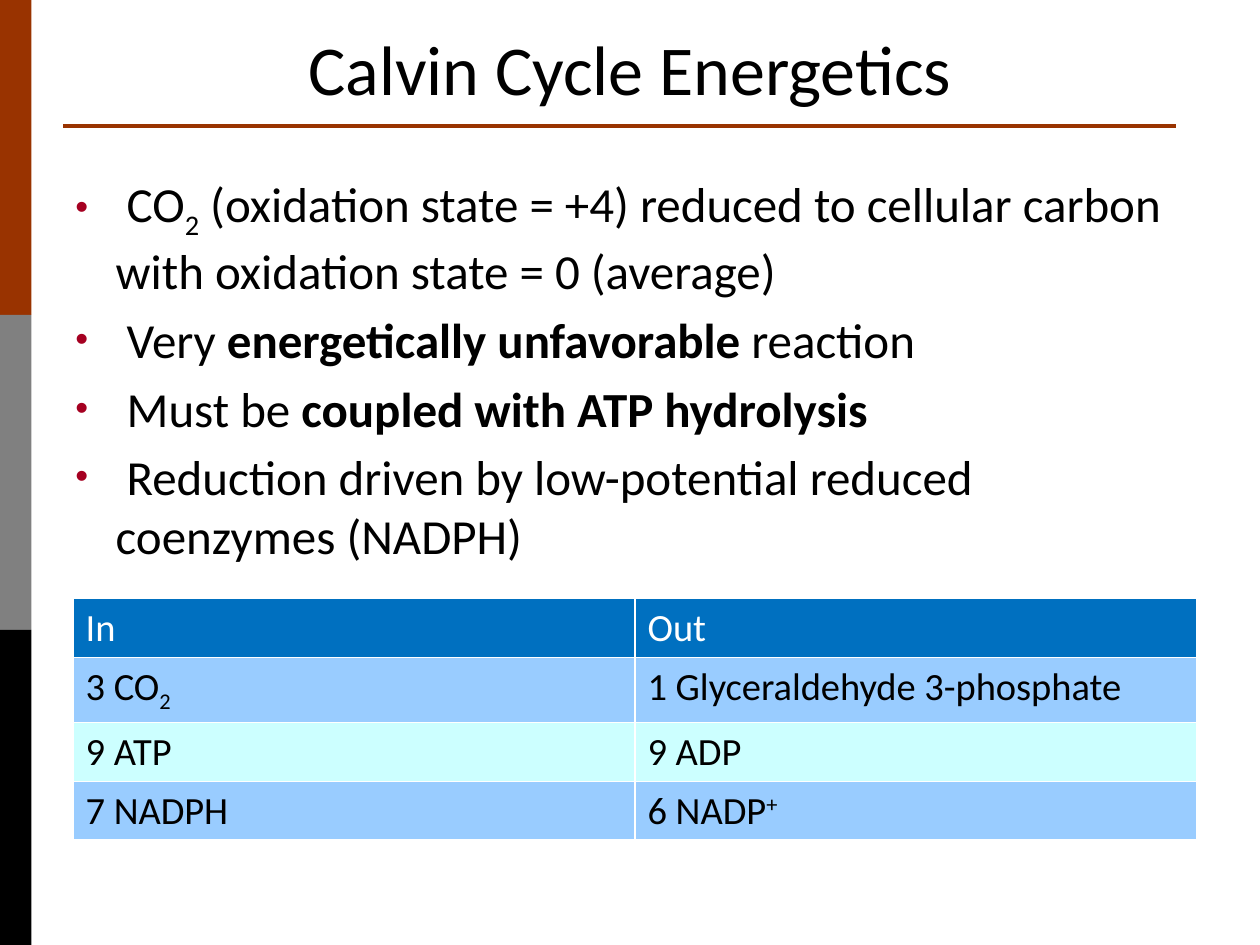
"""Build the Calvin cycle energetics slide."""
from dataclasses import dataclass

from lxml.etree import SubElement
from pptx import Presentation
from pptx.dml.color import RGBColor
from pptx.enum.shapes import MSO_CONNECTOR, MSO_SHAPE
from pptx.enum.text import MSO_ANCHOR, PP_ALIGN
from pptx.oxml.ns import qn
from pptx.util import Emu, Pt

SCALE = 9144


@dataclass(frozen=True)
class Theme:
    """Colours and type sizes."""
    font: str = "Calibri"
    ink: str = "000000"
    white: str = "FFFFFF"
    rust: str = "993300"
    gray: str = "808080"
    dot: str = "A50021"
    head: str = "0070C0"
    bands: tuple = ("99CCFF", "CCFFFF")
    title: int = 40
    body: int = 28
    cell: int = 22


def px(*sizes):
    """Turn px lengths into EMU."""
    return [Emu(size * SCALE) for size in sizes]


def rgb(code):
    """Turn a hex code into a colour."""
    return RGBColor.from_string(code)


def node(parent, tag, **attrs):
    """Add a drawing element with attributes."""
    return SubElement(parent, qn(tag), {key: str(val) for key, val in attrs.items()})


def write(para, text, font, size, color, bold=False, base=0):
    """Add one run of text in the given format."""
    run = para.add_run()
    run.text = text
    face = run.font
    face.name, face.size, face.bold = font, Pt(size), bold
    face.color.rgb = rgb(color)
    if base:
        run._r.get_or_add_rPr().set("baseline", str(base * 1000))


class Deck:
    """Hold the style and the current slide."""

    def __init__(self, theme):
        """Start a deck with one title-only slide."""
        self.theme = theme
        self.file = Presentation()
        self.file.slide_width, self.file.slide_height = px(1000, 750)
        self.slide = self.file.slides.add_slide(self.file.slide_layouts[5])
        self.shapes = self.slide.shapes

    def fill_text(self, para, parts, size, color):
        """Write plain or formatted parts into a paragraph."""
        for part in parts:
            text, form = (part, {}) if isinstance(part, str) else part
            write(para, text, self.theme.font, size, color, **form)

    def bar(self, box, color):
        """Add a plain filled bar."""
        bar = self.shapes.add_shape(MSO_SHAPE.RECTANGLE, *px(*box))
        bar.shadow.inherit = False
        bar.fill.solid()
        bar.fill.fore_color.rgb = rgb(color)
        bar.line.fill.background()

    def rule(self, ends, color, width):
        """Add a straight line."""
        line = self.shapes.add_connector(MSO_CONNECTOR.STRAIGHT, *px(*ends))
        line.line.color.rgb = rgb(color)
        line.line.width = Pt(width)
        node(line._element.spPr, "a:effectLst")

    def title(self, box, text):
        """Place and fill the title."""
        title = self.shapes.title
        title.left, title.top, title.width, title.height = px(*box)
        frame = title.text_frame
        frame.word_wrap = True
        frame.vertical_anchor = MSO_ANCHOR.BOTTOM
        para = frame.paragraphs[0]
        para.alignment = PP_ALIGN.CENTER
        self.fill_text(para, [text], self.theme.title, self.theme.ink)

    def bullets(self, box, items, indent, gap):
        """Add a bulleted list."""
        frame = self.shapes.add_textbox(*px(*box)).text_frame
        frame.word_wrap = True
        hang = px(indent)[0]
        for row, parts in enumerate(items):
            para = frame.add_paragraph() if row else frame.paragraphs[0]
            props = para._p.get_or_add_pPr()
            props.set("marL", str(hang))
            props.set("indent", str(-hang))
            tint = node(props, "a:buClr")
            node(tint, "a:srgbClr", val=self.theme.dot)
            node(props, "a:buSzPct", val=75000)
            node(props, "a:buFont", typeface="Arial")
            node(props, "a:buChar", char="•")
            para.space_before = Pt(gap if row else 0)
            self.fill_text(para, parts, self.theme.body, self.theme.ink)

    def edge(self, cell):
        """Draw thin borders round a cell."""
        props = cell._tc.get_or_add_tcPr()
        for side in "LRTB":
            line = node(props, f"a:ln{side}", w=Pt(1))
            paint = node(line, "a:solidFill")
            node(paint, "a:srgbClr", val=self.theme.white)

    def table(self, box, rows):
        """Add a banded table with a header row."""
        look = self.theme
        grid = self.shapes.add_table(len(rows), len(rows[0]), *px(*box)).table
        for row, cells in enumerate(rows):
            shade = look.bands[(row - 1) % 2] if row else look.head
            color = look.ink if row else look.white
            for col, parts in enumerate(cells):
                cell = grid.cell(row, col)
                self.edge(cell)
                cell.fill.solid()
                cell.fill.fore_color.rgb = rgb(shade)
                para = cell.text_frame.paragraphs[0]
                self.fill_text(para, parts, look.cell, color)


def main():
    """Build and save the slide."""
    look = Theme()
    deck = Deck(look)
    bold, sub, sup = {"bold": True}, {"base": -25}, {"base": 30}
    for step, color in enumerate((look.rust, look.gray, look.ink)):
        deck.bar((0, step * 250, 25, 250), color)
    deck.rule((50, 100, 933, 100), look.rust, 2.25)
    deck.title((50, 0, 900, 92), "Calvin Cycle Energetics")
    deck.bullets((50, 133, 900, 321), [
        [" CO", ("2", sub),
         " (oxidation state = +4) reduced to cellular carbon with oxidation state = 0 (average)"],
        [" Very ", ("energetically unfavorable ", bold), "reaction"],
        [" Must be ", ("coupled with ATP hydrolysis", bold)],
        [" Reduction driven by low-potential reduced coenzymes (NADPH)"],
    ], indent=32, gap=5.6)
    deck.table((58, 475, 892, 184), [
        (["In"], ["Out"]),
        (["3 CO", ("2", sub)], ["1 Glyceraldehyde 3-phosphate"]),
        (["9 ATP"], ["9 ADP"]),
        (["7 NADPH"], ["6 NADP", ("+", sup)]),
    ])
    deck.file.save("out.pptx")


if __name__ == "__main__":
    main()
